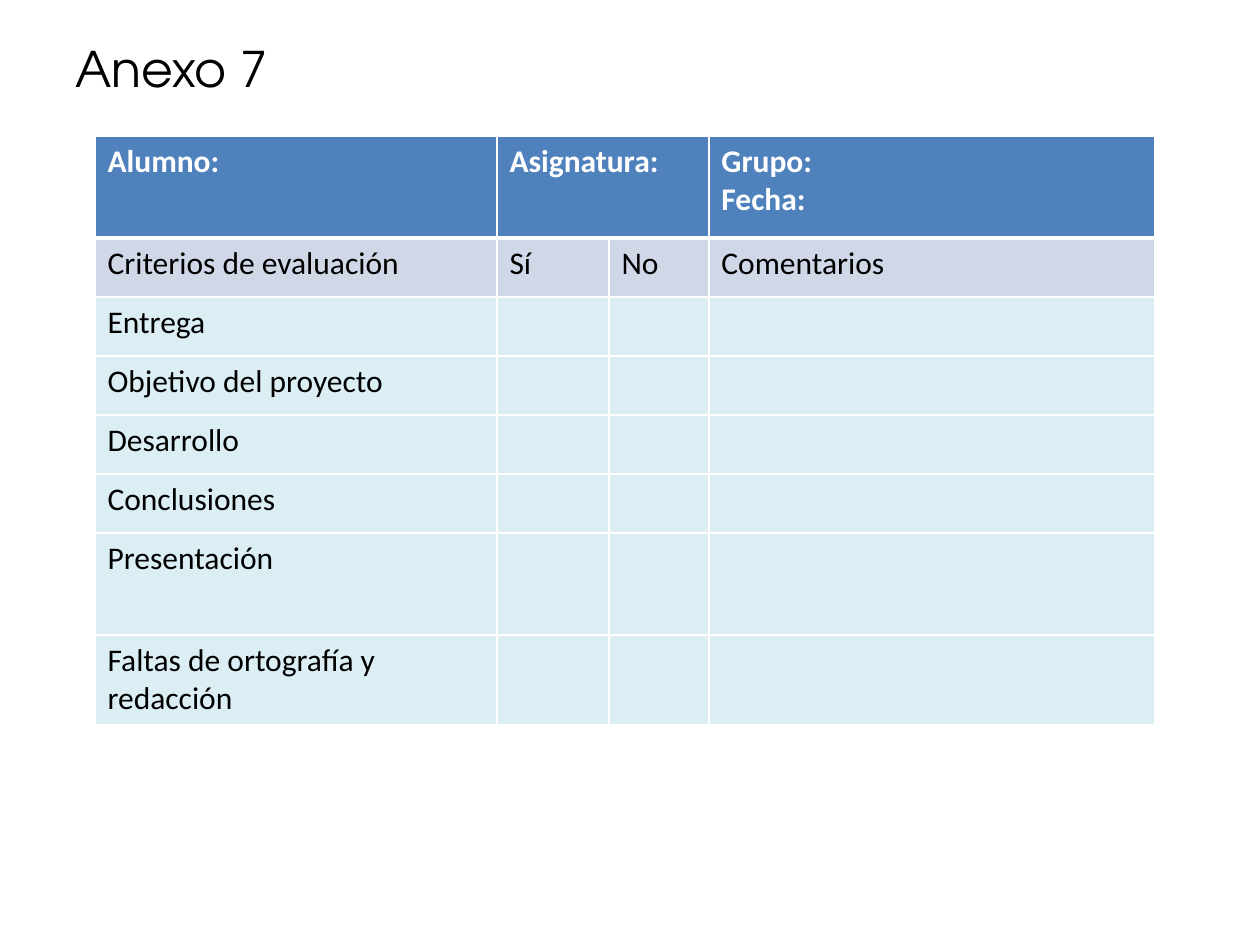
import pptx
import pptx.util
import pptx.dml.color
import pptx.oxml.ns
from lxml import etree

PX = 914400 // 126
COLORS = {"header": "4F81BD", "criteria": "D0D8E8", "body": "DBEEF4",
          "white": "FFFFFF", "black": "000000"}
TITLE = "Anexo 7"
ROWS = [
    (["Alumno:", "Asignatura:", "", "Grupo:\nFecha:"], 102),
    (["Criterios de evaluación", "Sí", "No", "Comentarios"], 59),
    (["Entrega"], 59),
    (["Objetivo del proyecto"], 59),
    (["Desarrollo"], 59),
    (["Conclusiones"], 59),
    (["Presentación"], 102),
    (["Faltas de ortografía y redacción"], 59),
]
COL_WIDTHS = [402, 112, 100, 446]
TABLE_LEFT, TABLE_TOP = 95, 136
TITLE_BOX = (63, 32, 231, 72)


def px(n):
    return pptx.util.Emu(n * PX)


def rgb(name):
    return pptx.dml.color.RGBColor.from_string(COLORS[name])


def write(tf, text, font, size, color, bold=False):
    for i, line in enumerate(text.split("\n")):
        p = tf.paragraphs[0] if i == 0 else tf.add_paragraph()
        r = p.add_run()
        r.text = line
        r.font.name = font
        r.font.size = pptx.util.Pt(size)
        r.font.bold = bold
        r.font.color.rgb = rgb(color)


def set_borders(cell, row):
    qn = pptx.oxml.ns.qn
    widths = {"L": 1, "R": 1, "T": 3 if row == 1 else 1, "B": 3 if row == 0 else 1}
    tc_pr = cell._tc.get_or_add_tcPr()
    for side, width in widths.items():
        ln = etree.SubElement(tc_pr, qn("a:ln" + side), w=str(pptx.util.Pt(width)))
        fill = etree.SubElement(ln, qn("a:solidFill"))
        etree.SubElement(fill, qn("a:srgbClr"), val=COLORS["white"])


def add_rubric(s):
    heights = [h for _, h in ROWS]
    table = s.shapes.add_table(
        len(ROWS), len(COL_WIDTHS), px(TABLE_LEFT), px(TABLE_TOP),
        px(sum(COL_WIDTHS)), px(sum(heights))).table
    for col, width in zip(table.columns, COL_WIDTHS):
        col.width = px(width)
    for i, (texts, height) in enumerate(ROWS):
        table.rows[i].height = px(height)
        fill = ("header", "criteria")[i] if i < 2 else "body"
        for j in range(len(COL_WIDTHS)):
            cell = table.cell(i, j)
            set_borders(cell, i)
            cell.fill.solid()
            cell.fill.fore_color.rgb = rgb(fill)
            if j < len(texts) and texts[j]:
                write(cell.text_frame, texts[j], "Calibri", 18,
                      "white" if i == 0 else "black", i == 0)
    table.cell(0, 1).merge(table.cell(0, 2))


def add_title(s):
    tf = s.shapes.add_textbox(*map(px, TITLE_BOX)).text_frame
    tf.word_wrap = False
    tf.auto_size = pptx.enum.text.MSO_AUTO_SIZE.SHAPE_TO_FIT_TEXT
    write(tf, TITLE, "TeX Gyre Adventor", 28, "black")


def main():
    prs = pptx.Presentation()
    prs.slide_width, prs.slide_height = px(1260), px(945)
    s = prs.slides.add_slide(prs.slide_layouts[6])
    add_rubric(s)
    add_title(s)
    prs.save("out.pptx")


if __name__ == "__main__":
    main()
